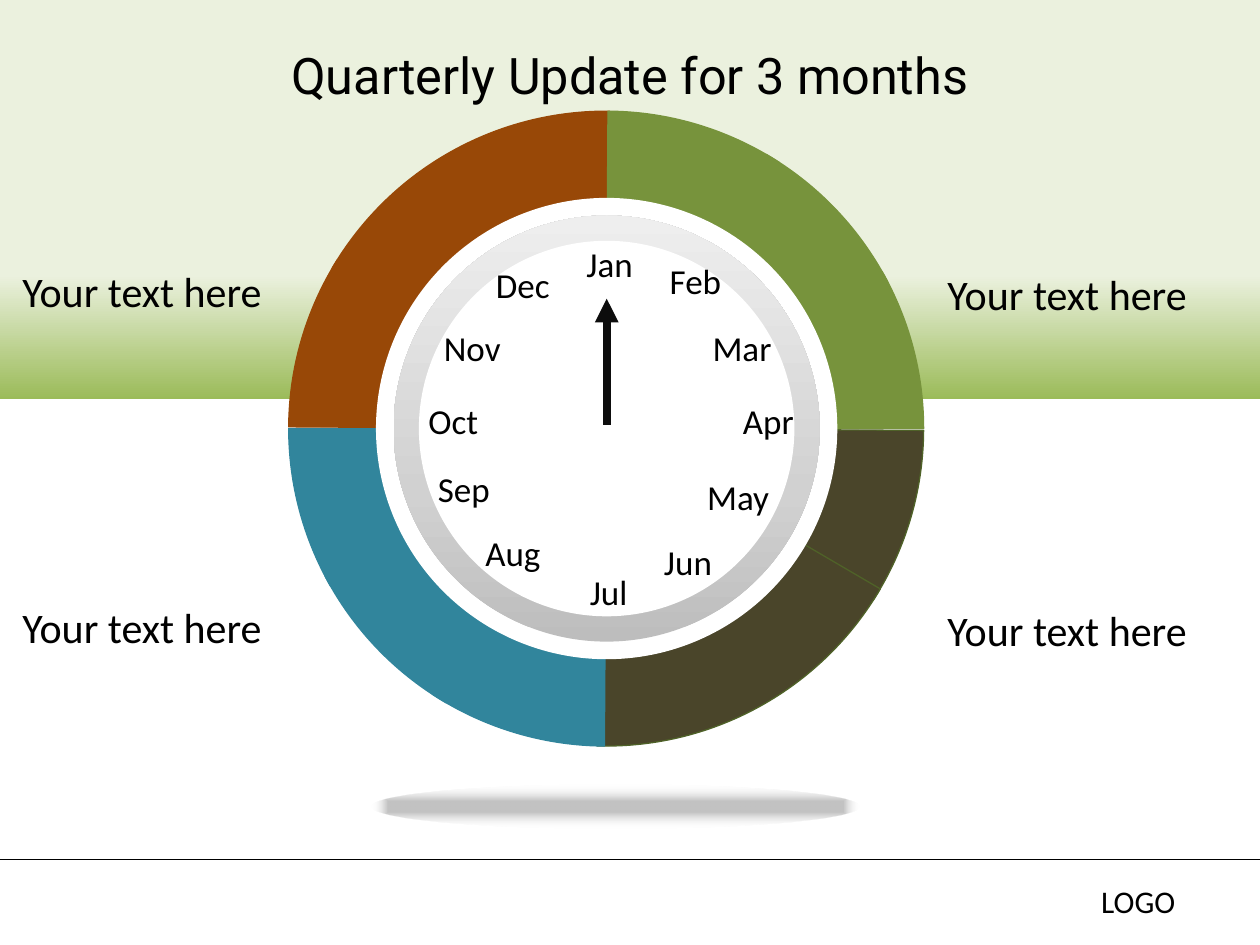
from dataclasses import dataclass
from typing import NamedTuple

from lxml import etree
from pptx import Presentation
from pptx.dml.color import RGBColor
from pptx.enum.shapes import MSO_CONNECTOR, MSO_SHAPE
from pptx.enum.text import MSO_ANCHOR, MSO_AUTO_SIZE, PP_ALIGN
from pptx.oxml.ns import qn
from pptx.util import Cm, Pt

RECTANGLE, ELLIPSE, BLOCK_ARC = MSO_SHAPE.RECTANGLE, MSO_SHAPE.OVAL, MSO_SHAPE.BLOCK_ARC
STRAIGHT = MSO_CONNECTOR.STRAIGHT
LEFT, CENTER = PP_ALIGN.LEFT, PP_ALIGN.CENTER
MIDDLE = MSO_ANCHOR.MIDDLE
GROW = MSO_AUTO_SIZE.SHAPE_TO_FIT_TEXT


@dataclass(frozen=True)
class Theme:
    body_font: str = "Calibri"
    title_font: str = "Roboto"
    title_size: float = 28.8
    label_size: float = 24
    month_size: float = 20
    logo_size: float = 18
    text: str = "000000"
    paper: str = "FFFFFF"
    pale: str = "EBF1DE"
    leaf: str = "9BBB59"
    green: str = "77933C"
    brown: str = "4A452A"
    brown_edge: str = "4F6228"
    teal: str = "31859C"
    rust: str = "984807"
    hand: str = "0D0D0D"
    silver: tuple = ((0, "BDBDBD", 100), (35, "D1D1D1", 100), (100, "EEEEEE", 100))


class Box(NamedTuple):
    x: float
    y: float
    w: float
    h: float

    def lengths(self):
        return [Cm(value) for value in self]

    def centre(self):
        return self.x + self.w / 2, self.y + self.h / 2


THEME = Theme()
ARC_START = 198.2
ARC_THICKNESS = 0.25
QUARTERS = [
    (THEME.brown, THEME.brown_edge, [(30, 1.67), (60, 18.99)]),
    (THEME.teal, THEME.teal, [(120, 1.95), (150, 1.5), (180, 0)]),
    (THEME.rust, THEME.rust, [(210, 1.26), (240, 18.39)]),
    (THEME.green, THEME.green, [(0, 0), (300, 1.81), (330, 1.53)]),
]
MONTH_OFFSETS = {
    "Jan": (0.06, -3.33), "Feb": (1.79, -2.97), "Mar": (2.73, -1.63),
    "Apr": (3.26, -0.15), "May": (2.65, 1.37), "Jun": (1.64, 2.69),
    "Jul": (0.04, 3.3), "Aug": (-1.89, 2.51), "Sep": (-2.88, 1.22),
    "Oct": (-3.09, -0.15), "Nov": (-2.71, -1.63), "Dec": (-1.69, -2.9),
}


def add_run(paragraph, words, size, font):
    run = paragraph.add_run()
    run.text = words
    run.font.size = Pt(size)
    run.font.name = font
    run.font.color.rgb = RGBColor.from_string(THEME.text)


def add_label(shapes, box, words, size, align=LEFT):
    label = shapes.add_textbox(*box.lengths())
    label.text_frame.word_wrap = True
    label.text_frame.auto_size = GROW
    paragraph = label.text_frame.paragraphs[0]
    paragraph.alignment = align
    add_run(paragraph, words, size, THEME.body_font)


def add_plain(shapes, kind, box, fill=None, edge=None):
    shape = shapes.add_shape(kind, *box.lengths())
    shape.shadow.inherit = False
    if fill:
        shape.fill.solid()
        shape.fill.fore_color.rgb = RGBColor.from_string(fill)
    if edge:
        shape.line.color.rgb = RGBColor.from_string(edge)
        shape.line.width = Pt(0.75)
    else:
        shape.line.fill.background()
    return shape


def set_gradient(shape, stops, angle=None):
    shape.fill.gradient()
    gradient = shape.element.spPr.find(qn("a:gradFill"))
    for child in list(gradient):
        gradient.remove(child)
    stop_list = etree.SubElement(gradient, qn("a:gsLst"))
    for position, colour, opacity in stops:
        stop = etree.SubElement(stop_list, qn("a:gs"), pos=str(position * 1000))
        tint = etree.SubElement(stop, qn("a:srgbClr"), val=colour)
        if opacity < 100:
            etree.SubElement(tint, qn("a:alpha"), val=str(opacity * 1000))
    if angle is None:
        route = etree.SubElement(gradient, qn("a:path"), {"path": "shape"})
        etree.SubElement(route, qn("a:fillToRect"), dict.fromkeys("ltrb", "50000"))
    else:
        etree.SubElement(gradient, qn("a:lin"), ang=str(angle * 60000), scaled="0")


def add_line(shapes, start, end, colour, width, arrow=False):
    line = shapes.add_connector(STRAIGHT, *[Cm(value) for value in (*start, *end)])
    line.line.color.rgb = RGBColor.from_string(colour)
    line.line.width = Pt(width)
    if arrow:
        etree.SubElement(line.line._get_or_add_ln(), qn("a:headEnd"), type="triangle")
    etree.SubElement(line.element.spPr, qn("a:effectLst"))


def build_header(shapes, box):
    band = add_plain(shapes, RECTANGLE, box)
    set_gradient(band, [(0, THEME.pale, 100), (69, THEME.pale, 100), (100, THEME.leaf, 100)], 90)


def build_footer(shapes, box):
    add_line(shapes, (box.x, box.y), (box.x + box.w, box.y), THEME.text, 0.75)
    add_label(shapes, Box(box.x + 21.95, box.y + 0.33, 2.82, 1.02), "LOGO", THEME.logo_size)


def build_ring(shapes, box):
    for fill, edge, arcs in QUARTERS:
        quarter = shapes.add_group_shape()
        for rotation, arc_end in arcs:
            arc = add_plain(quarter.shapes, BLOCK_ARC, box, fill, edge)
            arc.rotation = rotation
            for index, value in enumerate((ARC_START, arc_end, ARC_THICKNESS)):
                arc.adjustments[index] = value


def build_dial(shapes, box):
    x, y = box.centre()

    def disc(size, fill=None):
        return add_plain(shapes, ELLIPSE, Box(x - size / 2, y - size / 2, size, size), fill)

    disc(box.w, THEME.paper)
    set_gradient(disc(box.w - 0.71), THEME.silver, 270)
    disc(box.w - 1.73, THEME.paper)
    add_line(shapes, (x, y - 2.62), (x, y - 0.08), THEME.hand, 4.5, arrow=True)
    months = shapes.add_group_shape()
    width, height = 2.1, 1.11
    for month, (dx, dy) in MONTH_OFFSETS.items():
        month_box = Box(x + dx - width / 2, y + dy - height / 2, width, height)
        add_label(months.shapes, month_box, month, THEME.month_size, CENTER)


def build_floor_shadow(shapes, box):
    floor = add_plain(shapes, ELLIPSE, box)
    set_gradient(floor, [(24, THEME.text, 24), (100, THEME.paper, 0)])


def build_captions(shapes, box):
    for dx, dy in ((18.65, 0.05), (0, 0)):
        for row in range(2):
            caption = Box(box.x + dx, box.y + dy + row * 6.78, 6.78, 1.27)
            add_label(shapes, caption, "Your text here", THEME.label_size)


def build_title(shapes, box, words):
    title = shapes.title
    title.left, title.top, title.width, title.height = box.lengths()
    title.text_frame.vertical_anchor = MIDDLE
    paragraph = title.text_frame.paragraphs[0]
    paragraph.alignment = CENTER
    add_run(paragraph, words, THEME.title_size, THEME.title_font)
    shapes.element.append(title.element)


def main():
    deck = Presentation()
    deck.slide_width, deck.slide_height = Cm(25.4), Cm(19.05)
    shapes = deck.slides.add_slide(deck.slide_layouts[5]).shapes
    build_footer(shapes, Box(0, 17.32, 25.4, 1.73))
    build_header(shapes, Box(0, 0, 25.4, 8.05))
    build_ring(shapes, Box(5.82, 2.24, 12.8, 12.8))
    build_dial(shapes, Box(7.58, 3.99, 9.3, 9.3))
    build_floor_shadow(shapes, Box(7.49, 15.82, 9.83, 0.89))
    build_captions(shapes, Box(0.2, 5.23, 25.43, 8.05))
    build_title(shapes, Box(1.27, 0.76, 22.86, 1.47), "Quarterly Update for 3 months")
    deck.save("out.pptx")


if __name__ == "__main__":
    main()
